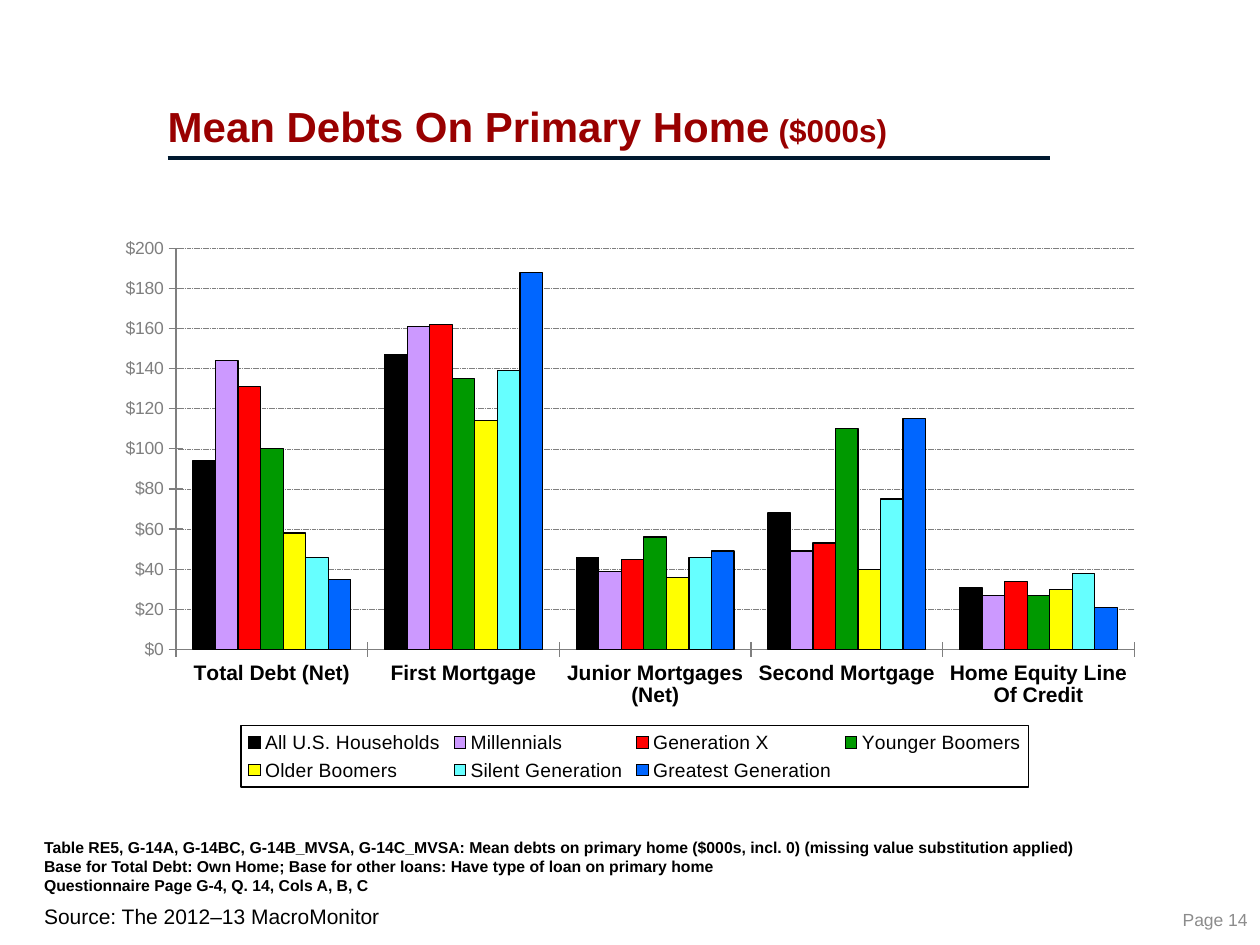
from lxml.etree import SubElement
from pptx import Presentation
from pptx.chart.data import CategoryChartData as ChartData
from pptx.dml.color import RGBColor as RGB
from pptx.enum.chart import XL_CHART_TYPE as Kind, XL_LEGEND_POSITION as Spot, XL_TICK_MARK as Tick
from pptx.enum.dml import MSO_LINE as Dash
from pptx.enum.shapes import MSO_CONNECTOR as Link
from pptx.enum.text import MSO_ANCHOR as Anchor, PP_ALIGN as Align
from pptx.oxml import parse_xml
from pptx.oxml.ns import nsdecls, qn
from pptx.util import Cm, Pt

FONT = "Arial"
HUES = {"black": "000000", "red": "990000", "navy": "00192F", "gray": "7F7F7F", "page": "8C8C8C"}
CATS = ["Total Debt (Net)", "First Mortgage", "Junior Mortgages (Net)",
        "Second Mortgage", "Home Equity Line Of Credit"]
GROUPS = [
    ("All U.S. Households", "000000", (94, 147, 46, 68, 31)),
    ("Millennials", "CC99FF", (144, 161, 39, 49, 27)),
    ("Generation X", "FF0000", (131, 162, 45, 53, 34)),
    ("Younger Boomers", "009900", (100, 135, 56, 110, 27)),
    ("Older Boomers", "FFFF00", (58, 114, 36, 40, 30)),
    ("Silent Generation", "66FFFF", (46, 139, 46, 75, 38)),
    ("Greatest Generation", "0066FF", (35, 188, 49, 115, 21)),
]
NOTES = [
    "Table RE5, G-14A, G-14BC, G-14B_MVSA, G-14C_MVSA: Mean debts on primary home "
    "($000s, incl. 0) (missing value substitution applied)",
    "Base for Total Debt: Own Home; Base for other loans: Have type of loan on primary home",
    "Questionnaire Page G-4, Q. 14, Cols A, B, C",
]


def style(font, size, hue="black", bold=False):
    font.name, font.size, font.bold = FONT, Pt(size), bold
    font.color.rgb = RGB.from_string(HUES[hue])


def stroke(line, hue, width):
    line.color.rgb = RGB.from_string(HUES[hue])
    line.width = Pt(width)


def write(shape, rows, size, hue="black", bold=False, align=Align.LEFT,
          anchor=Anchor.TOP, pad=(0.25, 0.13), gap=None):
    frame = shape.text_frame
    frame.word_wrap = True
    frame.vertical_anchor = anchor
    frame.margin_left = frame.margin_right = Cm(pad[0])
    frame.margin_top = frame.margin_bottom = Cm(pad[1])
    for i, row in enumerate(rows):
        para = frame.add_paragraph() if i else frame.paragraphs[0]
        para.alignment, para.line_spacing = align, gap
        for part, scale in row if isinstance(row, list) else [(row, size)]:
            run = para.add_run()
            run.text = part
            style(run.font, scale, hue, bold)


def add_box(slide, area, rows, size, **form):
    write(slide.shapes.add_textbox(*map(Cm, area)), rows, size, **form)


def add_title(slide):
    title = slide.shapes.title
    title.left, title.top, title.width, title.height = map(Cm, (3.38, 0.2, 18.21, 2.97))
    write(title, [[("Mean Debts On Primary Home", 24), (" ($000s)", 18)]], 24,
          hue="red", bold=True, anchor=Anchor.BOTTOM, pad=(0, 0.13), gap=0.8)


def add_rule(slide):
    rule = slide.shapes.add_connector(Link.STRAIGHT, *map(Cm, (3.38, 3.18, 21.16, 3.18)))
    stroke(rule.line, "navy", 2)
    SubElement(rule.element.spPr, qn("a:effectLst"))


def place(node, index, inner, area):
    for old in node.findall(qn("c:layout")):
        node.remove(old)
    mode = '<c:layoutTarget val="inner"/>' if inner else ""
    mode += '<c:xMode val="edge"/><c:yMode val="edge"/>'
    size = "".join(f'<c:{key} val="{val}"/>' for key, val in zip("xywh", area))
    node.insert(index, parse_xml(
        f'<c:layout {nsdecls("c")}><c:manualLayout>{mode}{size}</c:manualLayout></c:layout>'))


def set_axes(chart):
    cat, val = chart.category_axis, chart.value_axis
    for axis in (cat, val):
        axis.major_tick_mark = Tick.CROSS
        axis.minor_tick_mark = Tick.NONE
        stroke(axis.format.line, "gray", 0.75)
    style(cat.tick_labels.font, 12, bold=True)
    style(val.tick_labels.font, 10, "gray")
    val.minimum_scale, val.maximum_scale, val.major_unit = 0, 200, 20
    val.tick_labels.number_format = '"$"#,##0'
    val.tick_labels.number_format_is_linked = False
    grid = val.major_gridlines.format.line
    stroke(grid, "gray", 0.25)
    grid.dash_style = Dash.SQUARE_DOT


def set_legend(chart):
    chart.has_legend = True
    legend = chart.legend
    legend.position = Spot.BOTTOM
    legend.include_in_layout = False
    style(legend.font, 11)
    node = legend.font and chart.element.find(".//" + qn("c:legend"))
    place(node, 1, False, (0.13, 0.89, 0.75, 0.11))
    frame = parse_xml(
        f'<c:spPr {nsdecls("c", "a")}><a:noFill/><a:ln w="9525"><a:solidFill>'
        f'<a:srgbClr val="{HUES["black"]}"/></a:solidFill></a:ln></c:spPr>')
    node.find(qn("c:txPr")).addprevious(frame)


def add_bars(slide):
    data = ChartData()
    data.categories = CATS
    for name, _, vals in GROUPS:
        data.add_series(name, vals)
    area = map(Cm, (2.11, 4.6, 21.16, 11.28))
    chart = slide.shapes.add_chart(Kind.COLUMN_CLUSTERED, *area, data).chart
    chart.has_title = False
    style(chart.font, 10)
    plot = chart.plots[0]
    plot.vary_by_categories = False
    plot.gap_width, plot.overlap = 150, 0
    for bars, (_, hue, _) in zip(plot.series, GROUPS):
        bars.format.fill.solid()
        bars.format.fill.fore_color.rgb = RGB.from_string(hue)
        stroke(bars.format.line, "black", 0.75)
    set_axes(chart)
    set_legend(chart)
    place(chart.element.find(".//" + qn("c:plotArea")), 0, True, (0.068, 0.036, 0.913, 0.718))


def main():
    deck = Presentation()
    deck.slide_width, deck.slide_height = Cm(25.4), Cm(19.05)
    slide = deck.slides.add_slide(deck.slide_layouts[5])
    add_box(slide, (0.64, 18.08, 21.79, 0.76), ["Source: The 2012–13 MacroMonitor"], 12)
    add_rule(slide)
    add_title(slide)
    add_bars(slide)
    add_box(slide, (23.52, 18.19, 1.88, 0.69), ["Page 14"], 10, hue="page",
            align=Align.RIGHT, anchor=Anchor.MIDDLE)
    add_box(slide, (0, 16.31, 23, 2.06), NOTES, 9, bold=True,
            anchor=Anchor.BOTTOM, pad=(0.89, 0.33))
    deck.save("out.pptx")


if __name__ == "__main__":
    main()
